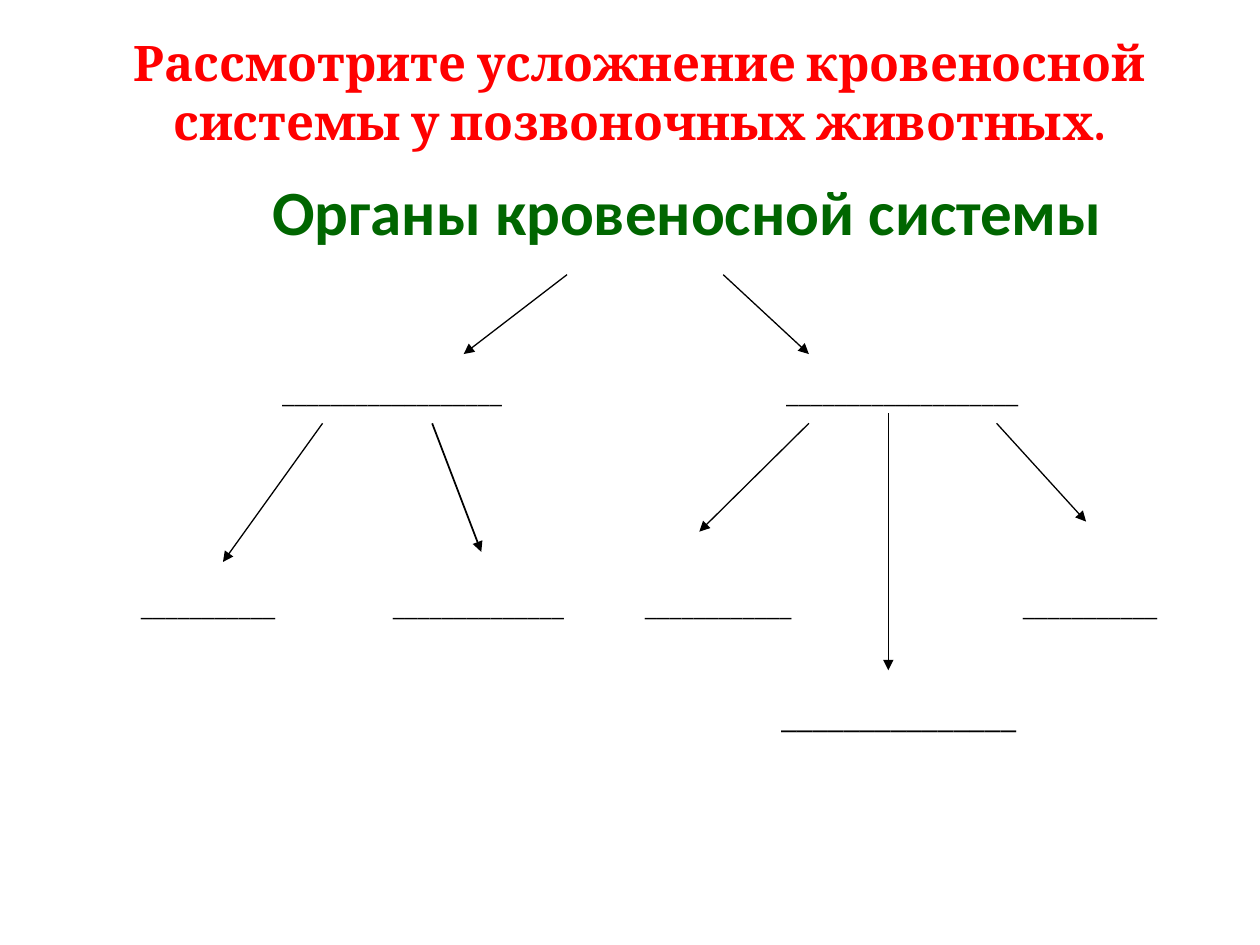
from lxml import etree
from pptx import Presentation
from pptx.dml.color import RGBColor
from pptx.enum import shapes, text
from pptx.oxml.ns import qn
from pptx.util import Inches, Pt

THEME = {
    "title": {"font": "Cambria", "size": 28, "color": "FF0000", "bold": True, "align": text.PP_ALIGN.CENTER},
    "heading": {"font": "Calibri", "size": 36, "color": "006600", "bold": True, "align": text.PP_ALIGN.CENTER},
    "blank": {"font": "Calibri", "size": 14, "color": "000000", "bold": False, "align": text.PP_ALIGN.LEFT},
    "large_blank": {"font": "Calibri", "size": 18, "color": "000000", "bold": False, "align": text.PP_ALIGN.LEFT},
    "arrow": "000000",
}

TEXTS = [
    ("heading", (1.89, 1.32, 7.13, 0.75), "Органы кровеносной системы"),
    ("blank", (1.14, 2.96, 7.25, 0.33), "\t" + "_" * 18 + "\t\t\t" + "_" * 19),
    ("blank", (1.02, 4.65, 8.39, 0.33),
     "_" * 11 + "\t" + "_" * 14 + "\t" + "_" * 12 + "\t\t" + "_" * 11),
    ("large_blank", (6.1, 5.48, 2.28, 0.4), "_" * 15),
    ("title", (0.51, 0.21, 9.13, 1.04),
     "Рассмотрите усложнение кровеносной системы у позвоночных животных."),
]

ARROWS = [
    ((4.5, 2.18), (3.68, 2.81), 0.75),
    ((5.74, 2.18), (6.42, 2.81), 0.75),
    ((2.56, 3.36), (1.77, 4.46), 0.75),
    ((3.43, 3.36), (3.82, 4.38), 1),
    ((6.42, 3.36), (5.55, 4.22), 0.75),
    ((7.91, 3.36), (8.62, 4.14), 0.75),
    ((7.05, 3.28), (7.05, 5.32), 0.75),
]


def add_tab_stops(para, count):
    stops = etree.Element(qn("a:tabLst"))
    for inch in range(1, count + 1):
        etree.SubElement(stops, qn("a:tab"), pos=str(Inches(inch)), algn="l")
    para._p.get_or_add_pPr().insert(0, stops)


def add_text(page, style_name, area, words):
    style = THEME[style_name]
    frame = page.shapes.add_textbox(*map(Inches, area)).text_frame
    frame.word_wrap = True
    para = frame.paragraphs[0]
    para.text = words
    para.alignment = style["align"]
    para.font.name = style["font"]
    para.font.size = Pt(style["size"])
    para.font.bold = style["bold"]
    para.font.color.rgb = RGBColor.from_string(style["color"])
    if "\t" in words:
        add_tab_stops(para, int(area[2]))


def add_arrow(page, start, end, width):
    arrow = page.shapes.add_connector(
        shapes.MSO_CONNECTOR.STRAIGHT, *map(Inches, start + end))
    arrow.line.color.rgb = RGBColor.from_string(THEME["arrow"])
    arrow.line.width = Pt(width)
    etree.SubElement(arrow.line._get_or_add_ln(), qn("a:tailEnd"), type="triangle")
    etree.SubElement(arrow._element.spPr, qn("a:effectLst"))


def main():
    deck = Presentation()
    deck.slide_width, deck.slide_height = Inches(10), Inches(7.5)
    page = deck.slides.add_slide(deck.slide_layouts[6])
    for style_name, area, words in TEXTS:
        add_text(page, style_name, area, words)
    for start, end, width in ARROWS:
        add_arrow(page, start, end, width)
    deck.save("out.pptx")


if __name__ == "__main__":
    main()
